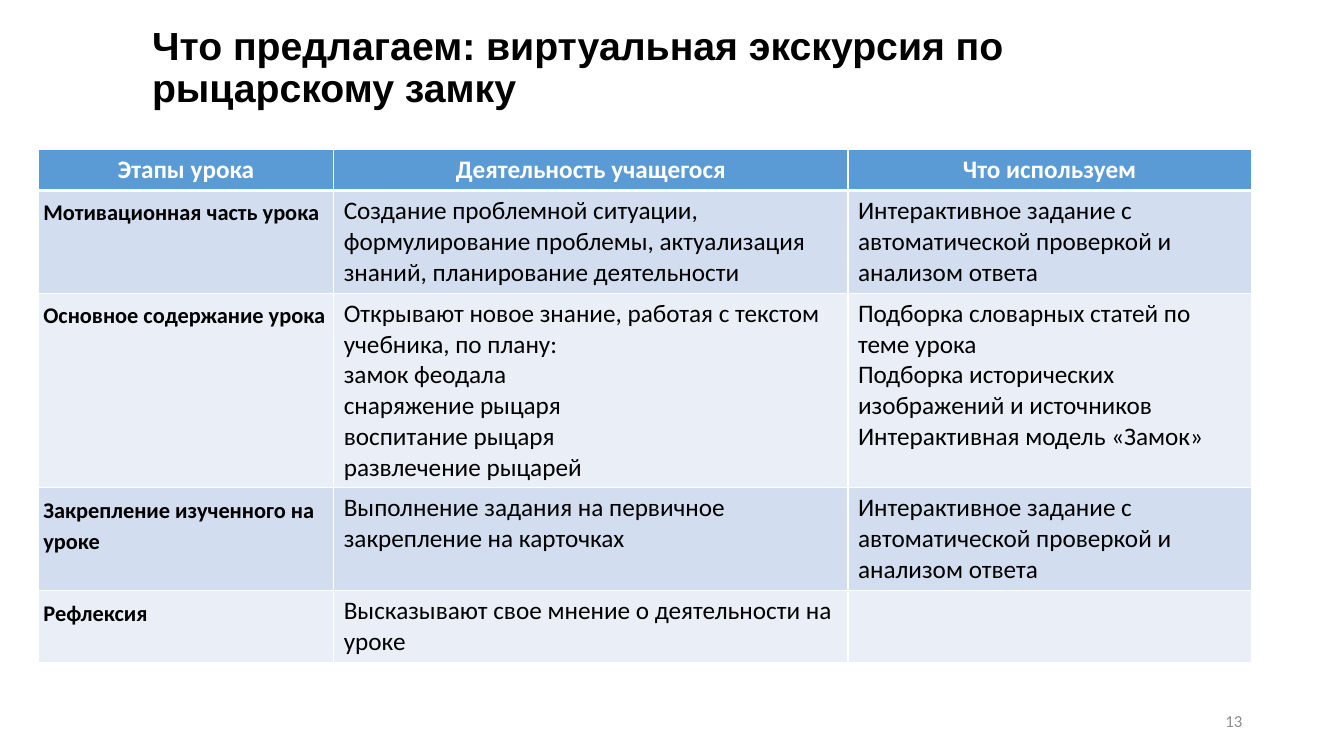
from lxml.etree import SubElement
from pptx import Presentation
from pptx.dml.color import RGBColor
from pptx.enum.text import MSO_ANCHOR, PP_ALIGN
from pptx.oxml.ns import qn
from pptx.util import Inches, Pt

COLORS = {
    "black": "000000",
    "white": "FFFFFF",
    "gray": "8C8C8C",
    "header": "5B9BD5",
    "odd": "D2DEEF",
    "even": "EAEFF7",
}

HEADINGS = ["Этапы урока", "Деятельность учащегося", "Что используем"]
INTERACTIVE_TASK = "Интерактивное задание с автоматической проверкой и анализом ответа"
STAGES = [
    ["Мотивационная часть урока",
     "Создание проблемной ситуации, формулирование проблемы, "
     "актуализация знаний, планирование деятельности",
     INTERACTIVE_TASK],
    ["Основное содержание урока",
     "Открывают новое знание, работая с текстом учебника, по плану:\n"
     "замок феодала \nснаряжение рыцаря\nвоспитание рыцаря\nразвлечение рыцарей",
     "Подборка словарных статей по теме урока\n"
     "Подборка исторических изображений и источников \n"
     "Интерактивная модель «Замок»"],
    ["Закрепление изученного на уроке",
     "Выполнение задания на первичное закрепление на карточках",
     INTERACTIVE_TASK],
    ["Рефлексия", "Высказывают свое мнение о деятельности на уроке", ""],
]
COLUMN_WIDTHS = [2.93, 5.1, 4]
ROW_HEIGHTS = [0.41, 1.02, 1.93, 1.02, 0.71]


def write_text(frame, text, font="Calibri", size=18, color="black", bold=False,
               align=PP_ALIGN.LEFT, line_spacing=None, space_after=None):
    paragraph = frame.paragraphs[0]
    paragraph.text = text
    paragraph.alignment = align
    if line_spacing is not None:
        paragraph.line_spacing = line_spacing
    if space_after is not None:
        paragraph.space_after = Pt(space_after)
    for run in paragraph.runs:
        run.font.name = font
        run.font.size = Pt(size)
        run.font.bold = bold
        run.font.color.rgb = RGBColor.from_string(COLORS[color])


class LessonSlide:
    def __init__(self, presentation):
        self.slide = presentation.slides.add_slide(presentation.slide_layouts[6])

    def text_box(self, text, left, top, width, height, **text_format):
        shape = self.slide.shapes.add_textbox(
            Inches(left), Inches(top), Inches(width), Inches(height))
        frame = shape.text_frame
        frame.word_wrap = True
        frame.vertical_anchor = MSO_ANCHOR.MIDDLE
        write_text(frame, text, **text_format)

    def table(self, rows, left, top, widths, heights):
        shape = self.slide.shapes.add_table(
            len(rows), len(widths), Inches(left), Inches(top),
            Inches(sum(widths)), Inches(sum(heights)))
        table = shape.table
        table.horz_banding = False
        for column, width in zip(table.columns, widths):
            column.width = Inches(width)
        for row, height in zip(table.rows, heights):
            row.height = Inches(height)
        for row_index, texts in enumerate(rows):
            for column_index, text in enumerate(texts):
                self.cell(table.cell(row_index, column_index), text, row_index, column_index)

    def cell(self, cell, text, row_index, column_index):
        self.borders(cell, top=3 if row_index == 1 else 1, bottom=3 if row_index == 0 else 1)
        if row_index == 0:
            fill = "header"
            text_format = {"color": "white", "bold": True, "align": PP_ALIGN.CENTER}
        else:
            fill = "odd" if row_index % 2 else "even"
            text_format = {}
            if column_index == 0:
                cell.margin_left = cell.margin_right = Inches(0.05)
                text_format = {"size": 16, "bold": True, "line_spacing": 1.15, "space_after": 10}
        cell.fill.solid()
        cell.fill.fore_color.rgb = RGBColor.from_string(COLORS[fill])
        write_text(cell.text_frame, text, **text_format)

    def borders(self, cell, top, bottom):
        properties = cell._tc.get_or_add_tcPr()
        for side, width in {"L": 1, "R": 1, "T": top, "B": bottom}.items():
            line = SubElement(properties, qn(f"a:ln{side}"), w=str(Pt(width)))
            fill = SubElement(line, qn("a:solidFill"))
            SubElement(fill, qn("a:srgbClr"), val=COLORS["white"])


def main():
    presentation = Presentation()
    presentation.slide_width = Inches(13.33)
    presentation.slide_height = Inches(7.5)
    lesson = LessonSlide(presentation)
    lesson.text_box("Что предлагаем: виртуальная экскурсия по рыцарскому замку",
                    1.41, 0.17, 11.01, 1.03,
                    font="Arial", size=28, bold=True, line_spacing=0.9)
    lesson.table([HEADINGS] + STAGES, 0.38, 1.48, COLUMN_WIDTHS, ROW_HEIGHTS)
    lesson.text_box("13", 9.42, 6.95, 3, 0.4, size=12, color="gray", align=PP_ALIGN.RIGHT)
    presentation.save("out.pptx")


if __name__ == "__main__":
    main()
